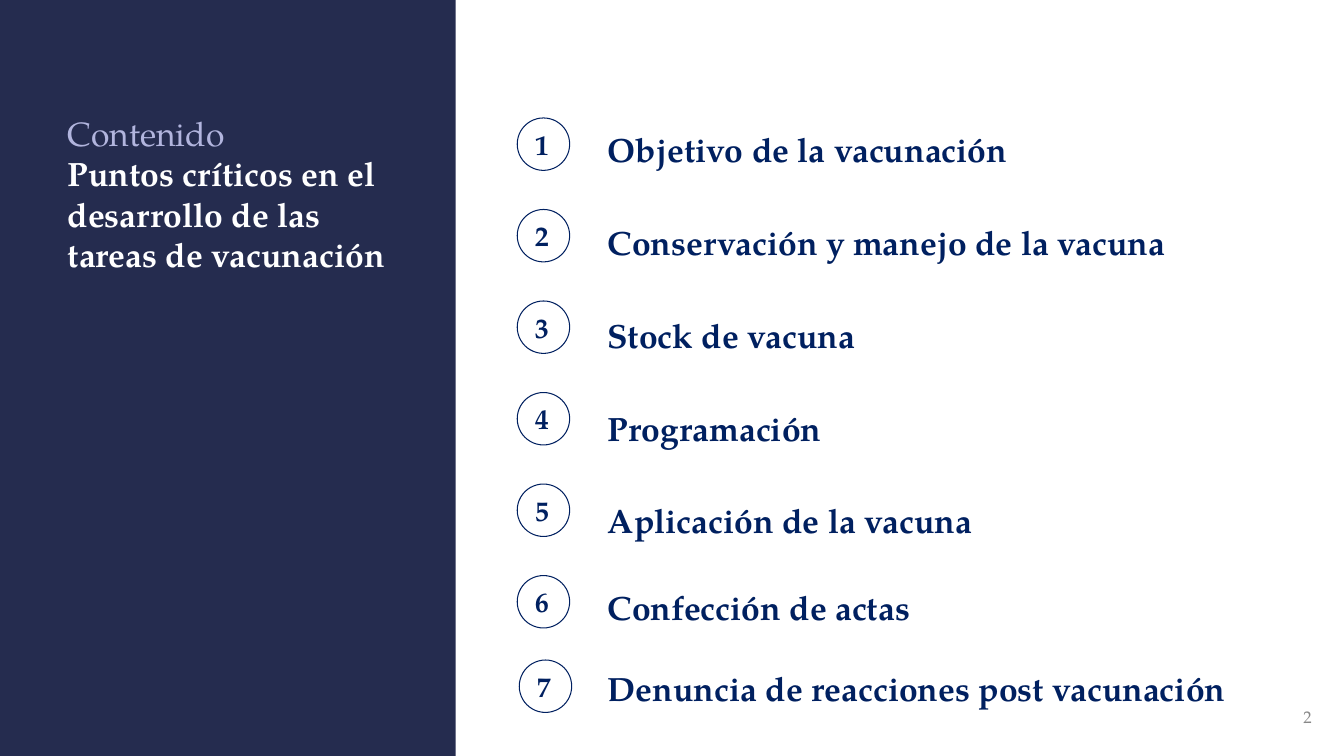
from lxml import etree
from pptx import Presentation
from pptx.dml.color import RGBColor
from pptx.enum.shapes import MSO_SHAPE
from pptx.enum.text import MSO_ANCHOR, MSO_AUTO_SIZE, PP_ALIGN
from pptx.oxml.ns import qn
from pptx.util import Inches, Pt

RECTANGLE, OVAL = MSO_SHAPE.RECTANGLE, MSO_SHAPE.OVAL
TOP, MIDDLE = MSO_ANCHOR.TOP, MSO_ANCHOR.MIDDLE
LEFT, RIGHT = PP_ALIGN.LEFT, PP_ALIGN.RIGHT
NO_AUTOFIT = MSO_AUTO_SIZE.NONE

FONT = "TeX Gyre Pagella"
COLORS = {"panel": "252C4F", "ink": "002060", "kicker": "B2B5DE",
          "white": "FFFFFF", "page": "888888"}
TOPICS = ["Objetivo de la vacunación", "Conservación y manejo de la vacuna",
          "Stock de vacuna", "Programación", "Aplicación de la vacuna",
          "Confección de actas", "Denuncia de reacciones post vacunación"]
LOOSE_TOPICS = 5
LOOSE_GAP, TIGHT_GAP = 33.2, 28.9
CIRCLE_SIZE, CIRCLE_PITCH = 0.52, 0.908


def color(name):
    """Return the named colour."""
    return RGBColor.from_string(COLORS[name])


def place(shape, left, top, width, height):
    """Move and size a shape, in inches."""
    shape.left, shape.top = Inches(left), Inches(top)
    shape.width, shape.height = Inches(width), Inches(height)


def prepare_frame(shape, anchor=TOP, inset=0.05):
    """Set wrapping, anchor and insets, and return the text frame."""
    frame = shape.text_frame
    frame.word_wrap = True
    frame.auto_size = NO_AUTOFIT
    frame.vertical_anchor = anchor
    frame.margin_left = frame.margin_right = Inches(0.1)
    frame.margin_top = frame.margin_bottom = Inches(inset)
    return frame


def write(frame, text, index=0, size=24, fill="ink", bold=False,
          align=LEFT, spacing=1.0, before=0):
    """Write one formatted paragraph, adding it when index is above zero."""
    paragraph = frame.add_paragraph() if index else frame.paragraphs[0]
    paragraph.alignment = align
    paragraph.line_spacing = spacing
    paragraph.space_before = Pt(before)
    run = paragraph.add_run()
    run.text = text
    run.font.name, run.font.size, run.font.bold = FONT, Pt(size), bold
    run.font.color.rgb = color(fill)
    return paragraph


def add_panel(slide, left, top, width, height):
    """Draw the dark side panel with the slide title on it."""
    panel = slide.shapes.add_shape(RECTANGLE, 0, 0, 0, 0)
    place(panel, left, top, width, height)
    panel.shadow.inherit = False
    panel.fill.solid()
    panel.fill.fore_color.rgb = color("panel")
    panel.line.fill.background()
    slide.shapes.element.insert(2, panel.element)
    title = slide.shapes.title
    place(title, left + 0.57, top + 1.07, 3.41, 2.12)
    frame = prepare_frame(title)
    write(frame, "Contenido", fill="kicker")
    write(frame, "Puntos críticos en el desarrollo de las tareas de vacunación",
          index=1, fill="white", bold=True)


def add_circle(slide, left, top, number):
    """Draw one numbered circle."""
    circle = slide.shapes.add_shape(OVAL, 0, 0, 0, 0)
    place(circle, left, top, CIRCLE_SIZE, CIRCLE_SIZE)
    circle.shadow.inherit = False
    circle.fill.background()
    circle.line.color.rgb = color("ink")
    circle.line.width = Pt(0.75)
    write(prepare_frame(circle, MIDDLE, 0.1), str(number), size=20, bold=True)


def add_topics(slide, left, top, width, height):
    """Fill the topic list and draw its column of numbered circles."""
    body = slide.placeholders[1]
    place(body, left + 0.8, top, width - 0.8, height)
    frame = prepare_frame(body)
    for index, topic in enumerate(TOPICS):
        loose = index < LOOSE_TOPICS
        last = index == len(TOPICS) - 1
        gap = 0 if index == 0 else TIGHT_GAP if last else LOOSE_GAP
        paragraph = write(frame, topic, index=index, bold=True,
                          spacing=1.15 if loose else 1.0, before=gap)
        properties = paragraph._p.get_or_add_pPr()
        properties.set("marL", "0")
        properties.set("indent", "0")
        etree.SubElement(properties, qn("a:buNone"))
        add_circle(slide, left + (0.02 if last else 0),
                   top + CIRCLE_PITCH * index - (0.07 if last else 0), index + 1)


def add_page_number(slide, left, top, width, height):
    """Write the page number at the right of its box."""
    box = slide.shapes.add_textbox(0, 0, 0, 0)
    place(box, left, top, width, height)
    write(prepare_frame(box, MIDDLE), "2", size=12, fill="page", align=RIGHT)


def main():
    """Build and save the contents slide."""
    presentation = Presentation()
    presentation.slide_width = Inches(13.33)
    presentation.slide_height = Inches(7.5)
    slide = presentation.slides.add_slide(presentation.slide_layouts[1])
    add_panel(slide, 0, 0, 4.52, 7.5)
    add_topics(slide, 5.13, 1.17, 7.98, 5.76)
    add_page_number(slide, 10.11, 6.91, 3, 0.4)
    presentation.save("out.pptx")


if __name__ == "__main__":
    main()
